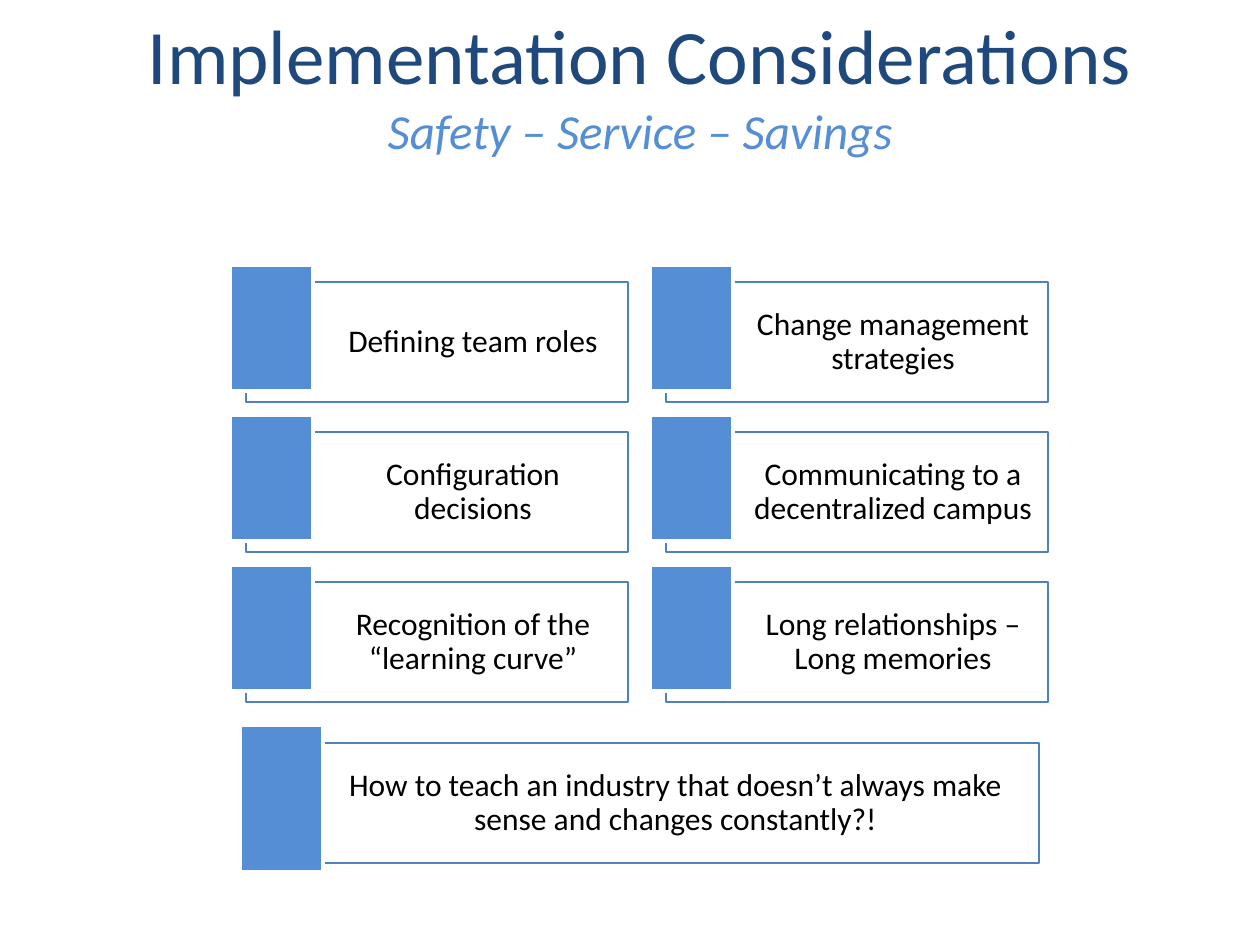
"""Builds the Implementation Considerations slide with its grid of topic cards."""
from lxml import etree
from pptx import Presentation
from pptx import util as u
from pptx.dml.color import RGBColor
from pptx.enum import shapes, text
from pptx.oxml.ns import qn

NAVY = RGBColor(0x1F, 0x49, 0x7D)
BLUE = RGBColor(0x55, 0x8E, 0xD5)
EDGE = RGBColor(0x4F, 0x81, 0xBD)
WHITE = RGBColor(0xFF, 0xFF, 0xFF)
BLACK = RGBColor(0, 0, 0)

LEFT, TOP, COL_STEP, ROW_STEP = 246, 282, 420, 150
CARD_W, CARD_H, TAB_W, TAB_H = 382, 120, 83, 126
TOPICS = [
    ["Defining team roles", "Change management strategies"],
    ["Configuration decisions", "Communicating to a decentralized campus"],
    ["Recognition of the “learning curve”", "Long relationships – Long memories"],
]


class Deck:
    font = "Calibri"
    scale = 914400 / 126

    def __init__(self, width, height):
        self.prs = Presentation()
        self.prs.slide_width, self.prs.slide_height = self.px(width), self.px(height)
        self.s = self.prs.slides.add_slide(self.prs.slide_layouts[6])

    def px(self, n):
        return u.Emu(round(n * self.scale))

    def frame(self, tf, margins, anchor):
        sides = ("margin_left", "margin_top", "margin_right", "margin_bottom")
        fmt = dict(zip(sides, map(self.px, margins)))
        fmt.update(word_wrap=True, vertical_anchor=anchor)
        for key, value in fmt.items():
            setattr(tf, key, value)

    def label(self, p, content, size, color, **extra):
        p.alignment = text.PP_ALIGN.CENTER
        r = p.add_run()
        r.text = content
        r.font.color.rgb = color
        for key, value in dict(name=self.font, size=u.Pt(size), **extra).items():
            setattr(r.font, key, value)

    def rect(self, x, y, w, h, fill, line, weight):
        sp = self.s.shapes.add_shape(
            shapes.MSO_SHAPE.RECTANGLE, *map(self.px, (x, y, w, h)))
        sp.shadow.inherit = False
        sp.fill.solid()
        sp.fill.fore_color.rgb = fill
        sp.line.color.rgb = line
        sp.line.width = u.Pt(weight)
        return sp

    def title(self, x, y, w, h, heading, motto):
        tf = self.s.shapes.add_textbox(*map(self.px, (x, y, w, h))).text_frame
        self.frame(tf, (12, 8, 12, 6), text.MSO_ANCHOR.TOP)
        self.label(tf.paragraphs[0], heading, 44, NAVY)
        self.label(tf.add_paragraph(), motto, 28, BLUE, italic=True)

    def card(self, x, y, w, h, content):
        sp = self.rect(x, y, w, h, WHITE, EDGE, 0.75)
        color = sp.element.spPr.find(qn("a:solidFill"))[0]
        etree.SubElement(color, qn("a:alpha")).set("val", "40000")
        self.frame(sp.text_frame, (81, 9, 9, 9), text.MSO_ANCHOR.MIDDLE)
        p = sp.text_frame.paragraphs[0]
        p.line_spacing = 0.9
        self.label(p, content, 18, BLACK)

    def tab(self, x, y, w, h):
        self.rect(x, y, w, h, BLUE, WHITE, 2)


def main():
    deck = Deck(1260, 945)
    deck.title(73, 0, 1134, 158, "Implementation Considerations",
               "Safety – Service – Savings")
    for row, topics in enumerate(TOPICS):
        for col, topic in enumerate(topics):
            x, y = LEFT + col * COL_STEP, TOP + row * ROW_STEP
            deck.card(x, y, CARD_W, CARD_H, topic)
            deck.tab(x - 16, y - 17, TAB_W, TAB_H)
    deck.card(240, 743, 799, CARD_H,
              "How to teach an industry that doesn’t always make sense "
              "and changes constantly?!")
    deck.tab(240, 725, TAB_W, 147)
    deck.prs.save("out.pptx")


if __name__ == "__main__":
    main()
